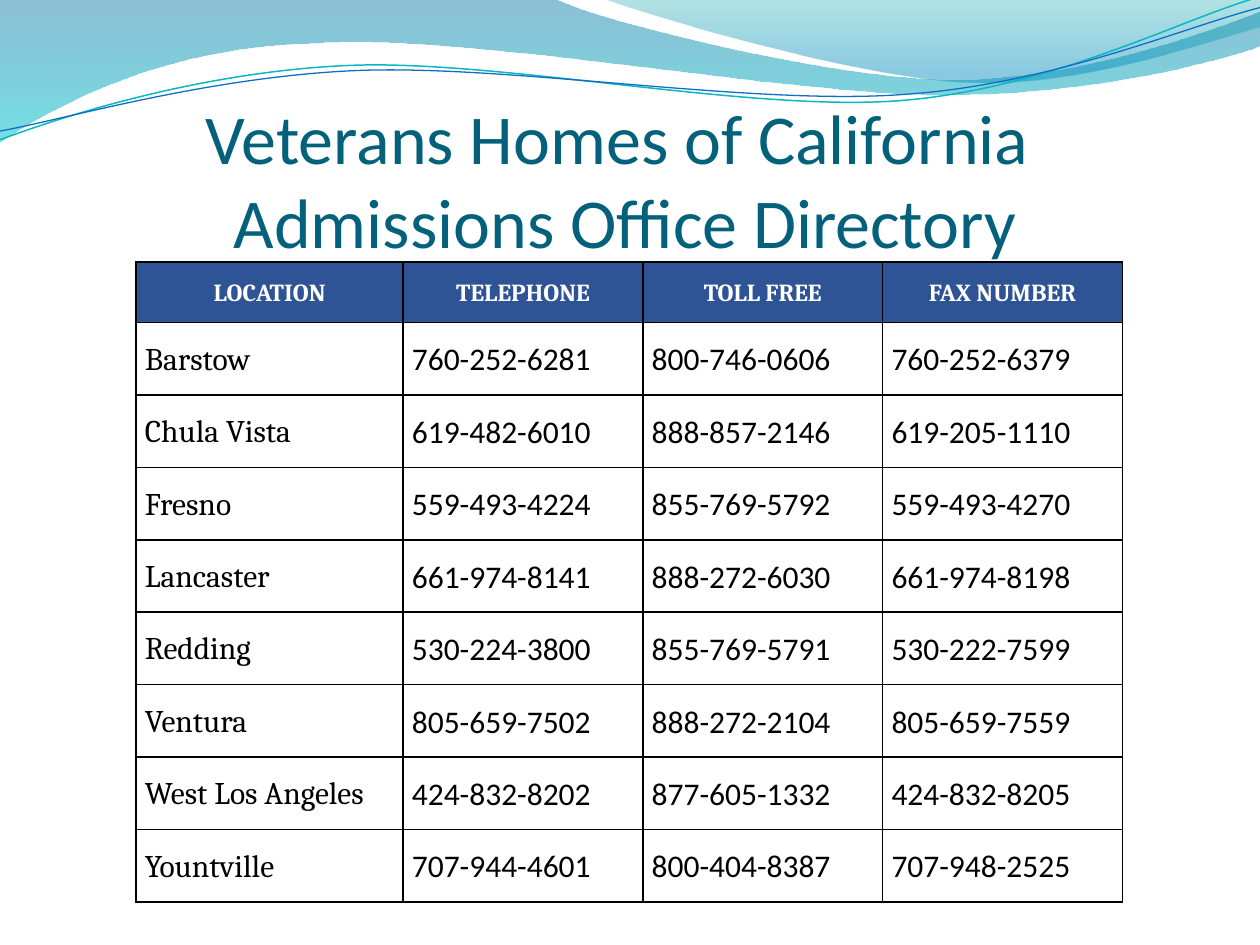
import math

import pptx
import pptx.dml.color
import pptx.enum.text
import pptx.oxml
import pptx.oxml.ns
import pptx.util

Inches = pptx.util.Inches
Pt = pptx.util.Pt
RGBColor = pptx.dml.color.RGBColor
Align = pptx.enum.text.PP_ALIGN
Anchor = pptx.enum.text.MSO_ANCHOR

WHITE = RGBColor(0xFF, 0xFF, 0xFF)
BLACK = RGBColor(0, 0, 0)
TITLE_TEAL = RGBColor(0x04, 0x61, 0x7B)
HEADER_BLUE = RGBColor(0x2F, 0x54, 0x96)
DEEP_BLUE = RGBColor(0x00, 0x74, 0xA1)
AQUA = RGBColor(0x00, 0xC6, 0xCF)
SEA_GREEN = RGBColor(0x00, 0xA1, 0xA9)
SKY_BLUE = RGBColor(0x00, 0x8B, 0xBF)
LINE_TEAL = RGBColor(0x0A, 0xB8, 0xBF)
LINE_BLUE = RGBColor(0x0F, 0x6F, 0xC6)

BROAD_WAVE = [
    (0, 0), (4.4, -0.01),
    (4.76, 0.17, 6.64, 0.63, 7.58, 0.63), (8.53, 0.63, 9.58, 0.26, 10, 0.09),
    (10.01, 0.36),
    (9.83, 0.44, 8.7, 0.76, 7.46, 0.75), (6.22, 0.75, 3.82, 0.28, 2.57, 0.34),
    (1.29, 0.36, 0.46, 0.83, -0.01, 1.13), (0, 0),
]
RIGHT_WAVE = [
    (4.79, -0.01),
    (5.09, 0.11, 6.82, 0.62, 7.69, 0.65), (8.56, 0.69, 9.61, 0.32, 10, 0.21),
    (10, 0), (4.79, -0.01),
]
TEAL_CURVE = [
    (0, 1.11),
    (0.48, 0.93, 1.58, 0.57, 2.77, 0.52), (3.95, 0.47, 5.93, 0.89, 7.13, 0.8),
    (8.33, 0.71, 9.38, 0.15, 9.98, -0.02),
]
BLUE_CURVE = [
    (0, 1.04),
    (0.47, 0.96, 1.64, 0.61, 2.83, 0.56), (4.03, 0.51, 5.97, 0.84, 7.17, 0.75),
    (8.36, 0.67, 9.41, 0.21, 10, 0.06),
]
LINE_TILT = -2.7

HEADINGS = ["LOCATION", "TELEPHONE", "TOLL FREE", "FAX NUMBER"]
OFFICES = [
    ["Barstow", "760-252-6281", "800-746-0606", "760-252-6379"],
    ["Chula Vista", "619-482-6010", "888-857-2146", "619-205-1110"],
    ["Fresno", "559-493-4224", "855-769-5792", "559-493-4270"],
    ["Lancaster", "661-974-8141", "888-272-6030", "661-974-8198"],
    ["Redding", "530-224-3800", "855-769-5791", "530-222-7599"],
    ["Ventura", "805-659-7502", "888-272-2104", "805-659-7559"],
    ["West Los Angeles", "424-832-8202", "877-605-1332", "424-832-8205"],
    ["Yountville", "707-944-4601", "800-404-8387", "707-948-2525"],
]
TABLE_WIDTH = 7.83
TABLE_HEIGHT = 5.08
LOCATION_WIDTH = 2.12
HEADER_HEIGHT = 0.48


def make_element(xml_name, content="", attributes=""):
    return pptx.oxml.parse_xml(
        f'<a:{xml_name} {pptx.oxml.ns.nsdecls("a")} {attributes}>{content}</a:{xml_name}>')


def local_points(segment, frame, tilt):
    left, top, width, height = frame
    cosine, sine = math.cos(math.radians(tilt)), math.sin(math.radians(tilt))
    points = []
    for x, y in zip(segment[::2], segment[1::2]):
        dx, dy = x - left - width / 2, y - top - height / 2
        points.append((Inches(width / 2 + dx * cosine + dy * sine),
                       Inches(height / 2 - dx * sine + dy * cosine)))
    return points


def add_curve(slide, segments, frame, closed, tilt=0):
    left, top, width, height = map(Inches, frame)
    builder = slide.shapes.build_freeform(left, top)
    builder.add_line_segments([(left + width, top + height)], close=closed)
    shape = builder.convert_to_shape()
    shape.shadow.inherit = False
    shape.rotation = tilt
    outline = shape.element.spPr.find(".//" + pptx.oxml.ns.qn("a:path"))
    for step in list(outline):
        outline.remove(step)
    for index, segment in enumerate(segments):
        kind = "moveTo" if index == 0 else "lnTo" if len(segment) == 2 else "cubicBezTo"
        content = "".join(f'<a:pt x="{x}" y="{y}"/>'
                          for x, y in local_points(segment, frame, tilt))
        outline.append(make_element(kind, content))
    if closed:
        outline.append(make_element("close"))
    return shape


def add_wave(slide, segments, frame, stops):
    shape = add_curve(slide, segments, frame, closed=True)
    shape.line.fill.background()
    shape.fill.gradient()
    shape.fill.gradient_angle = 270
    for stop, (position, color, opacity) in zip(shape.fill.gradient_stops, stops):
        stop.position = position
        stop.color.rgb = color
    color_elements = shape.element.spPr.findall(".//" + pptx.oxml.ns.qn("a:srgbClr"))
    for element, (position, color, opacity) in zip(color_elements, stops):
        element.append(make_element("alpha", attributes=f'val="{opacity * 1000}"'))


def add_line_curve(slide, segments, frame, color, width):
    shape = add_curve(slide, segments, frame, closed=False, tilt=LINE_TILT)
    shape.fill.background()
    shape.line.color.rgb = color
    shape.line.width = Pt(width)


def write_text(frame, text, *, font, size, color, bold=False,
               align=Align.LEFT, line_spacing=None, space_after=None):
    paragraph = frame.paragraphs[0]
    paragraph.text = text
    paragraph.alignment = align
    paragraph.line_spacing = line_spacing
    paragraph.space_after = space_after
    for run in paragraph.runs:
        run.font.name = font
        run.font.size = Pt(size)
        run.font.bold = bold
        run.font.color.rgb = color


def add_title(slide, text):
    box = slide.shapes.add_textbox(Inches(0.25), Inches(0.33), Inches(9.42), Inches(1.75))
    frame = box.text_frame
    frame.word_wrap = True
    frame.vertical_anchor = Anchor.BOTTOM
    frame.margin_left = frame.margin_right = frame.margin_bottom = 0
    frame.margin_top = Inches(0.05)
    write_text(frame, text, font="Calibri", size=40, color=TITLE_TEAL, align=Align.CENTER)


def set_borders(cell):
    properties = cell._tc.get_or_add_tcPr()
    line_fill = f'<a:solidFill><a:srgbClr val="{BLACK}"/></a:solidFill>'
    for side in ("lnL", "lnR", "lnT", "lnB"):
        properties.append(make_element(side, line_fill, f'w="{Pt(1)}"'))


def fill_cell(cell, text, is_header, is_location):
    cell.margin_left = cell.margin_right = Inches(0.07)
    cell.margin_top = cell.margin_bottom = 0
    cell.vertical_anchor = Anchor.MIDDLE
    set_borders(cell)
    if is_header:
        cell.fill.solid()
        cell.fill.fore_color.rgb = HEADER_BLUE
    else:
        cell.fill.background()
    write_text(
        cell.text_frame, text,
        font="Cambria" if is_header or is_location else "Calibri",
        size=14 if is_header else 18,
        color=WHITE if is_header else BLACK,
        bold=is_header,
        align=Align.CENTER if is_header else Align.LEFT,
        line_spacing=1.07, space_after=Pt(8))


def add_directory(slide):
    rows = [HEADINGS] + OFFICES
    table = slide.shapes.add_table(
        len(rows), len(HEADINGS), Inches(1.08), Inches(2.08),
        Inches(TABLE_WIDTH), Inches(TABLE_HEIGHT)).table
    table.first_row = table.horz_banding = False
    number_width = (TABLE_WIDTH - LOCATION_WIDTH) / (len(HEADINGS) - 1)
    for index, column in enumerate(table.columns):
        column.width = Inches(number_width if index else LOCATION_WIDTH)
    office_height = (TABLE_HEIGHT - HEADER_HEIGHT) / len(OFFICES)
    for row_index, values in enumerate(rows):
        is_header = row_index == 0
        table.rows[row_index].height = Inches(HEADER_HEIGHT if is_header else office_height)
        for column_index, text in enumerate(values):
            fill_cell(table.cell(row_index, column_index), text, is_header, column_index == 0)


def main():
    presentation = pptx.Presentation()
    presentation.slide_width = Inches(10)
    presentation.slide_height = Inches(7.5)
    slide = presentation.slides.add_slide(presentation.slide_layouts[6])
    add_wave(slide, BROAD_WAVE, (-0.01, -0.01, 10.02, 1.14),
             [(0, DEEP_BLUE, 45), (1, AQUA, 55)])
    add_wave(slide, RIGHT_WAVE, (4.79, -0.01, 5.21, 0.7),
             [(0, SEA_GREEN, 30), (0.8, SKY_BLUE, 45)])
    add_line_curve(slide, TEAL_CURVE, (-0.02, 0.22, 10.02, 0.71), LINE_TEAL, 0.85)
    add_line_curve(slide, BLUE_CURVE, (-0.02, 0.3, 10.03, 0.58), LINE_BLUE, 0.75)
    add_title(slide, "Veterans Homes of California \vAdmissions Office Directory")
    add_directory(slide)
    presentation.save("out.pptx")


if __name__ == "__main__":
    main()
